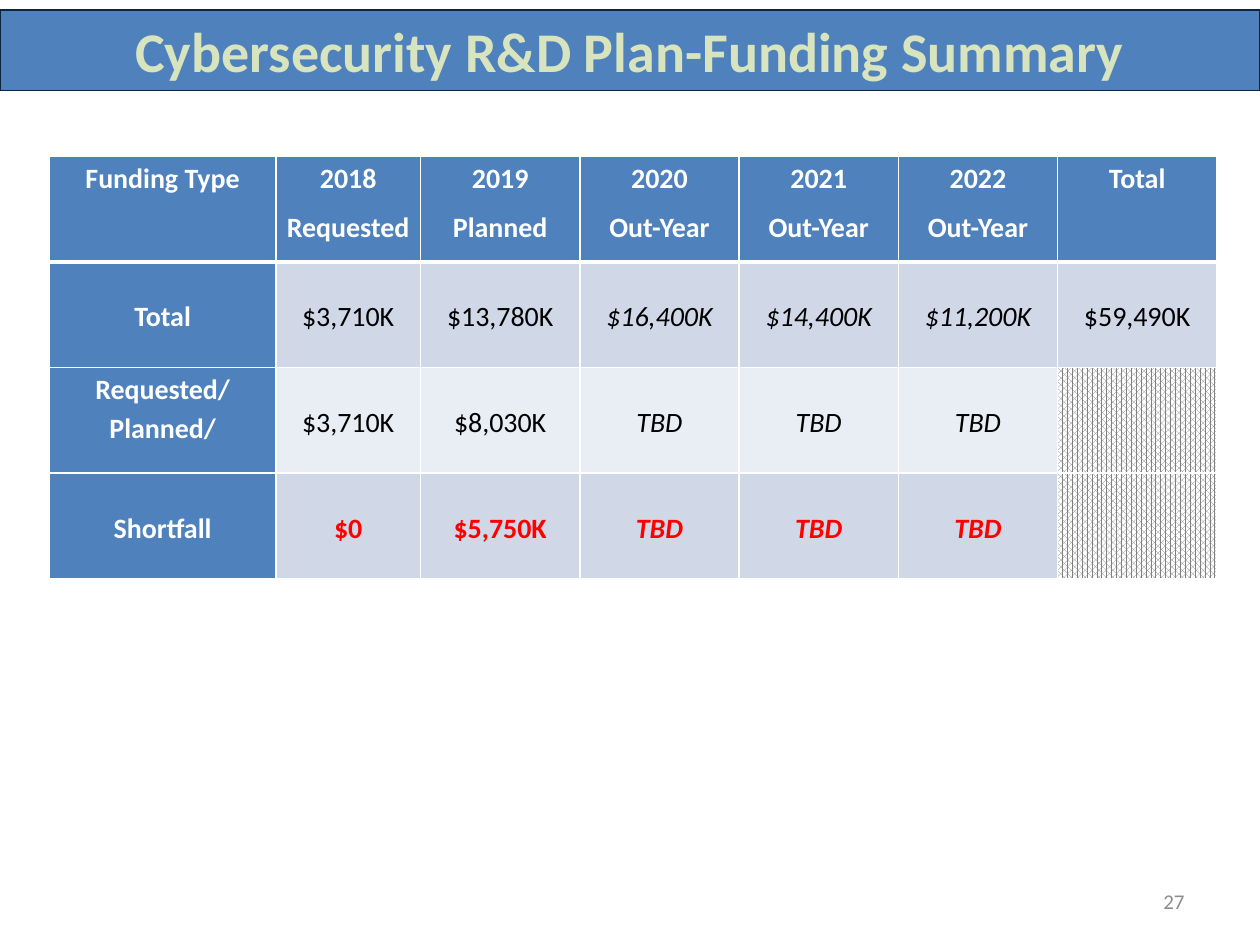
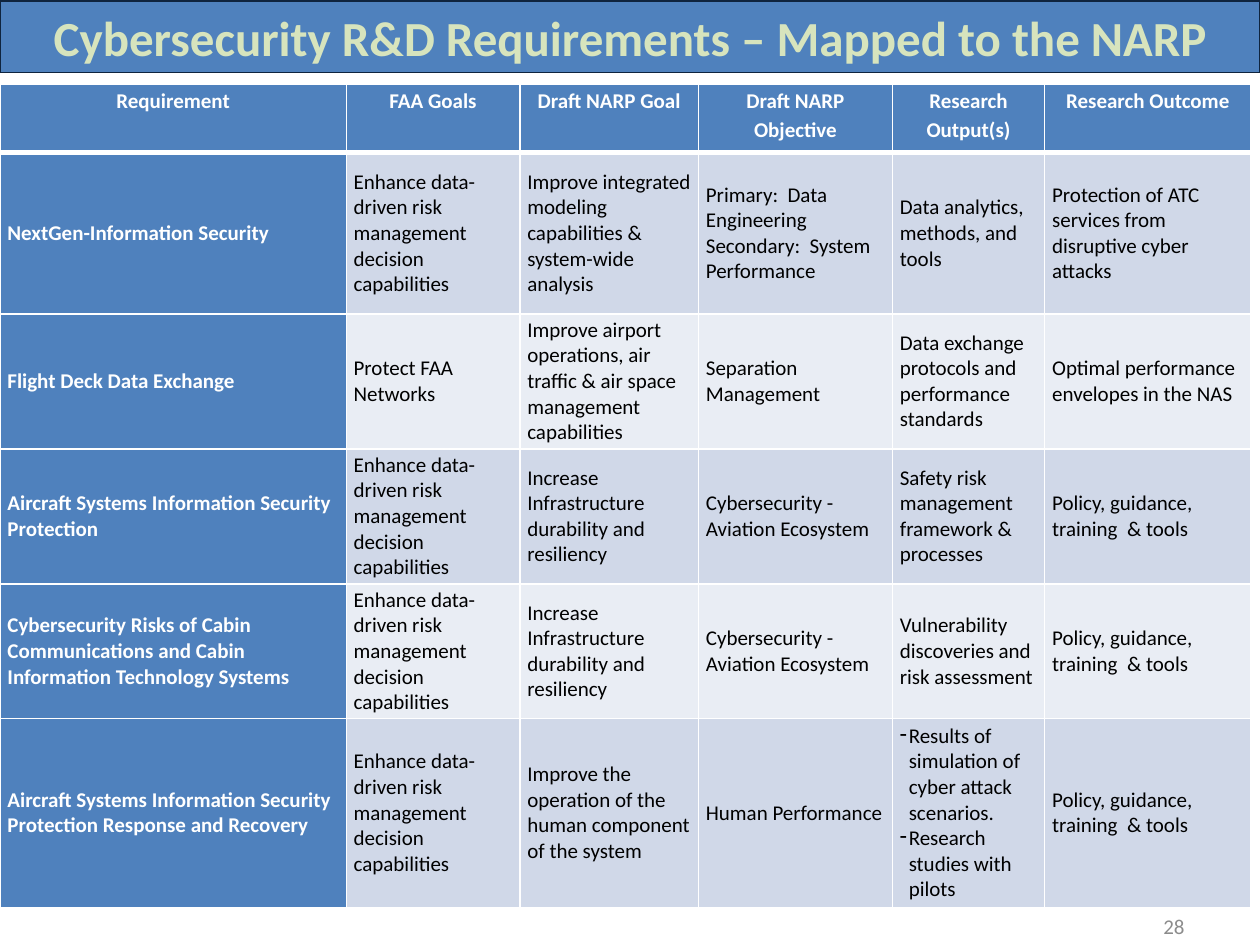
import pptx
import pptx.util
import pptx.dml.color
import pptx.enum.dml
import pptx.enum.shapes
import pptx.enum.text
import pptx.oxml.ns
import lxml.etree
from dataclasses import dataclass

Cm, Pt = pptx.util.Cm, pptx.util.Pt
ALIGN, ANCHOR = pptx.enum.text.PP_ALIGN, pptx.enum.text.MSO_ANCHOR
qn = pptx.oxml.ns.qn


@dataclass(frozen=True)
class Theme:
    font: str = "Calibri"
    blue: str = "4F81BD"
    navy: str = "0F243E"
    title_green: str = "D7E4BD"
    white: str = "FFFFFF"
    black: str = "000000"
    red: str = "FF0000"
    gray: str = "808080"
    number_gray: str = "8C8C8C"
    bands: tuple = ("E9EDF4", "D0D8E8")  # even rows, odd rows
    number_size: int = 12
    thin_rule: int = 1
    header_rule: int = 3


theme = Theme()
rgb = pptx.dml.color.RGBColor.from_string


def write_lines(frame, lines, color, font_format, paragraph_format):
    """Write one paragraph per line; a line starting with "- " becomes a bullet."""
    for index, line in enumerate(lines):
        paragraph = frame.add_paragraph() if index else frame.paragraphs[0]
        for name, value in paragraph_format.items():
            setattr(paragraph, name, value)
        if line.startswith("- "):
            properties = paragraph._p.get_or_add_pPr()
            properties.set("marL", str(Cm(0.18)))
            properties.set("indent", str(-Cm(0.18)))
            lxml.etree.SubElement(properties, qn("a:buChar")).set("char", "-")
        run = paragraph.add_run()
        run.text = line.removeprefix("- ")
        run.font.name = theme.font
        run.font.color.rgb = rgb(color)
        for name, value in font_format.items():
            setattr(run.font, name, value)


def rule_cell(cell, row):
    """Draw white cell edges, heavier between the header and the first row."""
    properties = cell._tc.get_or_add_tcPr()
    heavy = {0: "lnB", 1: "lnT"}.get(row)
    for edge in ("lnL", "lnR", "lnT", "lnB"):
        width = theme.header_rule if edge == heavy else theme.thin_rule
        line = lxml.etree.SubElement(properties, qn(f"a:{edge}"))
        line.set("w", str(Pt(width)))
        fill = lxml.etree.SubElement(line, qn("a:solidFill"))
        lxml.etree.SubElement(fill, qn("a:srgbClr")).set("val", theme.white)


# Cells hold one paragraph per text line; None is a hatched cell.
funding_rows = [
    ["Funding Type", "2018\nRequested", "2019\nPlanned", "2020\nOut-Year",
     "2021\nOut-Year", "2022\nOut-Year", "Total"],
    ["Total", "$3,710K", "$13,780K", "$16,400K", "$14,400K", "$11,200K", "$59,490K"],
    ["Requested/\nPlanned/", "$3,710K", "$8,030K", "TBD", "TBD", "TBD", None],
    ["Shortfall", "$0", "$5,750K", "TBD", "TBD", "TBD", None],
]

risk_goal = "Enhance data-driven risk management decision capabilities"
resiliency_goal = "Increase Infrastructure durability and resiliency"
ecosystem_objective = "Cybersecurity -\nAviation Ecosystem"
policy_outcome = "Policy, guidance, training  & tools"
requirement_rows = [
    ["Requirement", "FAA Goals", "Draft NARP Goal", "Draft NARP Objective",
     "Research Output(s)", "Research Outcome"],
    ["NextGen-Information Security", risk_goal,
     "Improve integrated modeling capabilities & system-wide analysis",
     "Primary:  Data Engineering\nSecondary:  System Performance",
     "Data analytics, methods, and tools",
     "Protection of ATC services from disruptive cyber attacks"],
    ["Flight Deck Data Exchange", "Protect FAA Networks",
     "Improve airport operations, air traffic & air space management capabilities",
     "Separation Management",
     "Data exchange protocols and performance standards",
     "Optimal performance  envelopes in the NAS"],
    ["Aircraft Systems Information Security Protection", risk_goal,
     resiliency_goal, ecosystem_objective,
     "Safety risk management framework & processes", policy_outcome],
    ["Cybersecurity Risks of Cabin Communications and Cabin Information "
     "Technology Systems", risk_goal, resiliency_goal, ecosystem_objective,
     "Vulnerability discoveries and risk assessment", policy_outcome],
    ["Aircraft Systems Information Security Protection Response and Recovery",
     risk_goal, "Improve the operation of the human component of the system",
     "Human Performance",
     "- Results of simulation of cyber attack scenarios.\n"
     "- Research studies with pilots", policy_outcome],
]

pages = [
    dict(title="Cybersecurity R&D Plan-Funding Summary", title_size=32,
         band=(0.2, 1.63), rows=funding_rows, corner=(1, 3.15),
         widths=[4.56, 2.92] + [3.21] * 5, heights=[2.13] * 4,
         text_size=16, inset=0.18, header_gap=6,
         body=dict(alignment=ALIGN.CENTER, line_spacing=1.15),
         italic_columns=(3, 4, 5), alert_rows=(3,),
         number="27", number_place=(17.65, 1.02)),
    dict(title="Cybersecurity R&D Requirements – Mapped to the NARP", title_size=28,
         band=(0.02, 1.45), rows=requirement_rows, corner=(0, 1.7),
         widths=[6.98, 3.5, 3.6, 3.91, 3.07, 4.16],
         heights=[1.38, 3.25, 2.72, 2.72, 2.72, 3.8],
         text_size=12, inset=0.15, header_gap=0,
         body=dict(alignment=ALIGN.LEFT),
         italic_columns=(), alert_rows=(),
         number="28", number_place=(18.29, 0.76)),
]

deck = pptx.Presentation()
deck.slide_width, deck.slide_height = Cm(25.4), Cm(19.05)

for page in pages:
    slide = deck.slides.add_slide(deck.slide_layouts[6])

    # Title band
    top, height = page["band"]
    band = slide.shapes.add_shape(pptx.enum.shapes.MSO_SHAPE.RECTANGLE,
                                  0, Cm(top), deck.slide_width, Cm(height))
    band.shadow.inherit = False
    band.fill.solid()
    band.fill.fore_color.rgb = rgb(theme.blue)
    band.line.color.rgb = rgb(theme.navy)
    band.line.width = Pt(0.75)
    band.text_frame.word_wrap = True
    band.text_frame.vertical_anchor = ANCHOR.TOP
    write_lines(band.text_frame, [page["title"]], theme.title_green,
                dict(size=Pt(page["title_size"]), bold=True),
                dict(alignment=ALIGN.CENTER))

    # Table
    rows, widths, heights = page["rows"], page["widths"], page["heights"]
    left, top = page["corner"]
    table = slide.shapes.add_table(len(rows), len(widths), Cm(left), Cm(top),
                                   Cm(sum(widths)), Cm(sum(heights))).table
    table.first_row = table.horz_banding = False
    for column, width in zip(table.columns, widths):
        column.width = Cm(width)
    for table_row, height in zip(table.rows, heights):
        table_row.height = Cm(height)

    for row, texts in enumerate(rows):
        for col, text in enumerate(texts):
            cell = table.cell(row, col)
            rule_cell(cell, row)
            if text is None:
                cell.fill.patterned()
                cell.fill.pattern = pptx.enum.dml.MSO_PATTERN.PERCENT_75
                cell.fill.fore_color.rgb = rgb(theme.gray)
                cell.fill.back_color.rgb = rgb(theme.white)
                continue
            lines = text.split("\n")
            header, label = row == 0, col == 0
            alert = row in page["alert_rows"]
            heading = header or label
            top_set = header or (label and len(lines) > 1)
            cell_format = dict(
                margin_left=Cm(page["inset"]), margin_right=Cm(page["inset"]),
                margin_top=0, margin_bottom=0,
                vertical_anchor=ANCHOR.TOP if top_set else ANCHOR.MIDDLE)
            for name, value in cell_format.items():
                setattr(cell, name, value)
            cell.fill.solid()
            cell.fill.fore_color.rgb = rgb(theme.blue if heading else theme.bands[row % 2])

            color = theme.white if heading else theme.red if alert else theme.black
            header_format = dict(alignment=ALIGN.CENTER, line_spacing=1.15,
                                 space_before=Pt(page["header_gap"]))
            write_lines(cell.text_frame, lines, color,
                        dict(size=Pt(page["text_size"]), bold=heading or alert,
                             italic=not header and col in page["italic_columns"]),
                        header_format if header else page["body"])

    # Slide number
    top, height = page["number_place"]
    number = slide.shapes.add_textbox(Cm(18.21), Cm(top), Cm(5.92), Cm(height))
    number.text_frame.word_wrap = True
    number.text_frame.vertical_anchor = ANCHOR.MIDDLE
    write_lines(number.text_frame, [page["number"]], theme.number_gray,
                dict(size=Pt(theme.number_size)), dict(alignment=ALIGN.RIGHT))

deck.save("out.pptx")
